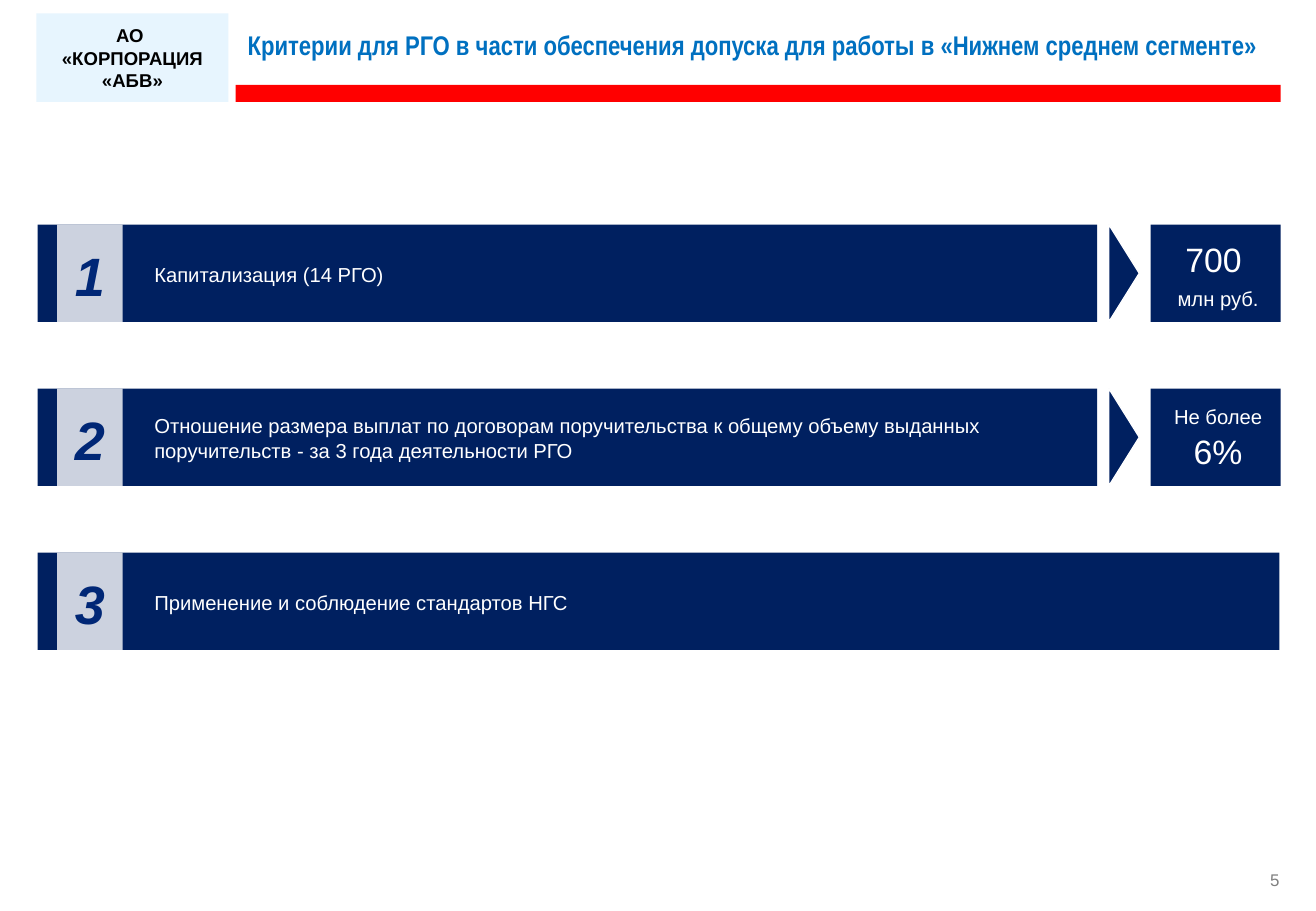
from lxml.etree import SubElement
from pptx import Presentation
from pptx.dml.color import RGBColor
from pptx.enum.shapes import MSO_SHAPE
from pptx.enum.text import MSO_ANCHOR, PP_ALIGN
from pptx.oxml.ns import qn
from pptx.util import Inches, Pt

TITLE = "Критерии для РГО в части обеспечения допуска для работы в «Нижнем среднем сегменте»"
COMPANY = ["АО ", "«КОРПОРАЦИЯ «АБВ»"]
PAGE_NUMBER = "5"
CRITERIA = [
    ("Капитализация (14 РГО)",
     [[("700 ", 20)], [("млн руб.", 12)]]),
    ("Отношение размера выплат по договорам поручительства к общему объему "
     "выданных поручительств - за 3 года деятельности РГО",
     [[("Не более ", 12), ("6%", 20)]]),
    ("Применение и соблюдение стандартов НГС", []),
]

NAVY = RGBColor(0x00, 0x20, 0x60)
NUMERAL_BLUE = RGBColor(0x00, 0x27, 0x76)
TITLE_BLUE = RGBColor(0x00, 0x70, 0xC0)
PALE_BLUE = RGBColor(0xE7, 0xF5, 0xFE)
RED = RGBColor(0xFF, 0x00, 0x00)
WHITE = RGBColor(0xFF, 0xFF, 0xFF)
BLACK = RGBColor(0x00, 0x00, 0x00)
GREY = RGBColor(0x80, 0x80, 0x80)

ROW_TOP, ROW_STEP, ROW_HEIGHT = 1.85, 1.35, 0.8
BAR_LEFT, BAR_WIDTH, FULL_BAR_WIDTH = 0.31, 8.72, 10.22
NUMBER_LEFT, NUMBER_WIDTH = 0.47, 0.54
VALUE_LEFT, VALUE_WIDTH = 9.47, 1.07
ARROW_CENTER, ARROW_DEPTH = 9.25, 0.25
LINE_SPACING = 1.06

deck = Presentation()
deck.slide_width = Inches(10.83)
deck.slide_height = Inches(7.5)
page = deck.slides.add_slide(deck.slide_layouts[6])


def add_box(left, top, width, height, fill, kind=MSO_SHAPE.RECTANGLE):
    box = page.shapes.add_shape(
        kind, Inches(left), Inches(top), Inches(width), Inches(height))
    box.shadow.inherit = False
    box.fill.solid()
    box.fill.fore_color.rgb = fill
    box.line.fill.background()
    return box


def add_text_box(left, top, width, height):
    return page.shapes.add_textbox(
        Inches(left), Inches(top), Inches(width), Inches(height))


def write(box, paragraphs, color, margins=(0.1, 0.05, 0.1, 0.05),
          align=PP_ALIGN.LEFT, anchor=MSO_ANCHOR.MIDDLE, font="Arial",
          bold=False, italic=False, spacing=None, before=0, after=0):
    frame = box.text_frame
    frame.word_wrap = True
    frame.vertical_anchor = anchor
    (frame.margin_left, frame.margin_top,
     frame.margin_right, frame.margin_bottom) = map(Inches, margins)
    for index, spans in enumerate(paragraphs):
        para = frame.add_paragraph() if index else frame.paragraphs[0]
        para.alignment = align
        para.line_spacing = spacing
        para.space_before = Pt(before)
        para.space_after = Pt(after)
        for text, size in spans:
            span = para.add_run()
            span.text = text
            span.font.name = font
            span.font.size = Pt(size)
            span.font.bold = bold
            span.font.italic = italic
            span.font.color.rgb = color


def add_header():
    company_box = add_box(0.3, 0.11, 1.58, 0.73, PALE_BLUE)
    write(company_box, [[(line, 11)] for line in COMPANY], BLACK,
          align=PP_ALIGN.CENTER, bold=True)
    add_box(1.94, 0.7, 8.6, 0.14, RED)
    title_box = add_text_box(1.94, 0.09, 8.6, 0.55)
    write(title_box, [[(TITLE, 16)]], TITLE_BLUE, margins=(0.1, 0.04, 0, 0.04),
          font="Arial Narrow", bold=True, spacing=Pt(20), after=3)


def add_criterion(number, top, text, value):
    bar_width = BAR_WIDTH if value else FULL_BAR_WIDTH
    bar = add_box(BAR_LEFT, top, bar_width, ROW_HEIGHT, NAVY)
    write(bar, [[(text, 12)]], WHITE, margins=(0.96, 0, 0.04, 0),
          spacing=LINE_SPACING, before=3)

    number_box = add_box(NUMBER_LEFT, top, NUMBER_WIDTH, ROW_HEIGHT, WHITE)
    tint = number_box.fill.fore_color
    color_node = next(number_box.element.spPr.iter(qn("a:srgbClr")))
    SubElement(color_node, qn("a:alpha")).set("val", "80000")
    write(number_box, [[(str(number), 32)]], NUMERAL_BLUE, margins=(0, 0, 0, 0),
          align=PP_ALIGN.CENTER, bold=True, italic=True, spacing=LINE_SPACING)

    if value:
        value_box = add_box(VALUE_LEFT, top, VALUE_WIDTH, ROW_HEIGHT, NAVY)
        write(value_box, value, WHITE, margins=(0.08, 0, 0.04, 0),
              align=PP_ALIGN.CENTER, spacing=LINE_SPACING, before=3)
        arrow = add_box(ARROW_CENTER - ROW_HEIGHT / 2,
                        top + (ROW_HEIGHT - ARROW_DEPTH) / 2,
                        ROW_HEIGHT, ARROW_DEPTH, NAVY,
                        MSO_SHAPE.ISOSCELES_TRIANGLE)
        arrow.rotation = 90
        arrow.line.color.rgb = WHITE
        arrow.line.width = Pt(0.75)


add_header()
for index, (text, value) in enumerate(CRITERIA):
    add_criterion(index + 1, ROW_TOP + index * ROW_STEP, text, value)
number_label = add_text_box(10.2, 7.17, 0.33, 0.16)
write(number_label, [[(PAGE_NUMBER, 10)]], GREY, margins=(0, 0, 0, 0),
      align=PP_ALIGN.RIGHT, anchor=MSO_ANCHOR.TOP, spacing=Pt(11.3))

deck.save("out.pptx")
